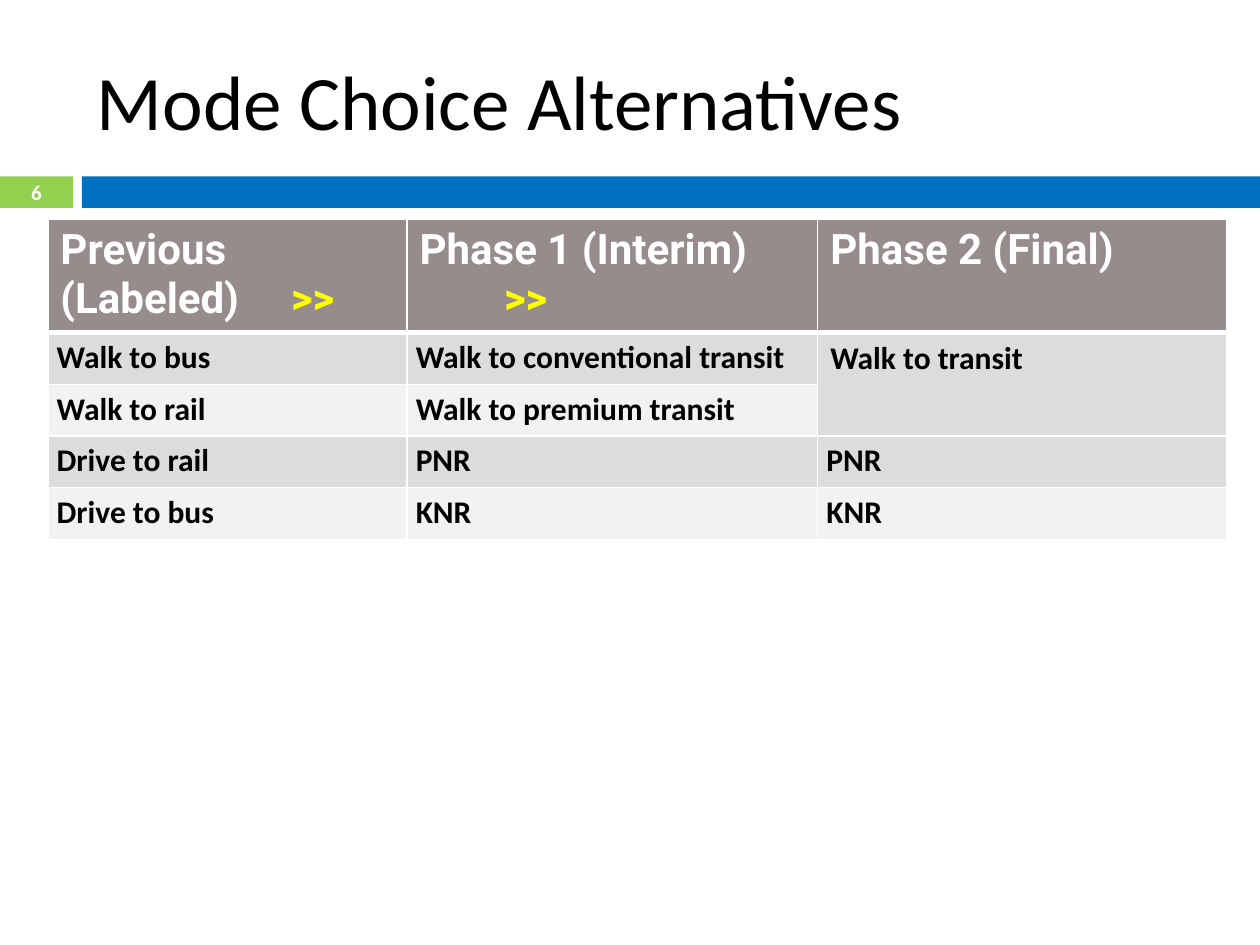
"""Build the mode choice alternatives slide with its table of phases."""
from lxml import etree
from pptx import Presentation
from pptx.dml.color import RGBColor
from pptx.enum.shapes import MSO_SHAPE
from pptx.enum.text import MSO_ANCHOR, PP_ALIGN
from pptx.oxml.ns import qn
from pptx.util import Inches, Pt

RECT = MSO_SHAPE.RECTANGLE
MIDDLE = MSO_ANCHOR.MIDDLE
LEFT, CENTER = PP_ALIGN.LEFT, PP_ALIGN.CENTER

TITLE = "Mode Choice Alternatives"
NUMBER = "6"
MARK = ">>"
HEADS = [
    [["Previous (Labeled)\t", MARK]],
    [["Phase 1 (Interim)"], [MARK]],
    [["Phase 2 (Final)"]],
]
ROWS = [
    ("Walk to bus", "Walk to conventional transit", "Walk to transit"),
    ("Walk to rail", "Walk to premium transit", ""),
    ("Drive to rail", "PNR", "PNR"),
    ("Drive to bus", "KNR", "KNR"),
]
THEME = {
    "font": "Calibri", "head_font": "Roboto",
    "title": 44, "head": 24, "body": 18, "number": 12,
    "ink": "000000", "white": "FFFFFF", "mark": "FFFF00",
    "green": "92D050", "blue": "0070C0", "top": "968C8C",
    "bands": ("DDDBDB", "F2F2F2"),
}
WIDE, HIGH = 10, 7.5
BAR_TOP, BAR_HIGH, TAB_WIDE, BAR_LEFT = 1.4, 0.25, 0.58, 0.65
TABLE_LEFT, TABLE_TOP, ROW_HIGH = 0.38, 1.74, 0.41
COLS = (2.85, 3.26, 3.25)
MARK_STOP, MARK_INDENT = 1.83, 0.67


def paint(fill, color):
    fill.solid()
    fill.fore_color.rgb = RGBColor.from_string(color)


def style(run, size, color, bold=False, font=THEME["font"]):
    run.font.name, run.font.size, run.font.bold = font, Pt(size), bold
    run.font.color.rgb = RGBColor.from_string(color)


def add_bar(slide, left, width, color):
    bar = slide.shapes.add_shape(
        RECT, Inches(left), Inches(BAR_TOP), Inches(width), Inches(BAR_HIGH))
    bar.shadow.inherit = False
    paint(bar.fill, color)
    bar.line.fill.background()
    return bar


def write(frame, text, align, *look):
    frame.word_wrap = True
    frame.vertical_anchor = MIDDLE
    frame.text = text
    para = frame.paragraphs[0]
    para.alignment = align
    style(para.runs[0], *look)


def edge(cell, top, bottom):
    props = cell._tc.get_or_add_tcPr()
    for side, width in (("L", 1), ("R", 1), ("T", top), ("B", bottom)):
        line = etree.SubElement(props, qn(f"a:ln{side}"), w=str(Pt(width)))
        fill = etree.SubElement(line, qn("a:solidFill"))
        etree.SubElement(fill, qn("a:srgbClr"), val=THEME["white"])


def fill_head(cell, lines):
    frame = cell.text_frame
    for i, parts in enumerate(lines):
        para = frame.add_paragraph() if i else frame.paragraphs[0]
        para.alignment = LEFT
        props = para._p.get_or_add_pPr()
        if i:
            props.set("marL", str(Inches(MARK_INDENT)))
        elif MARK in parts:
            stops = etree.SubElement(props, qn("a:tabLst"))
            etree.SubElement(
                stops, qn("a:tab"), pos=str(Inches(MARK_STOP)), algn="l")
        for part in parts:
            run = para.add_run()
            run.text = part
            color = THEME["mark" if part == MARK else "white"]
            style(run, THEME["head"], color, True, THEME["head_font"])


def fill_body(cell, text):
    para = cell.text_frame.paragraphs[0]
    para.text = text
    para.alignment = LEFT
    if not cell.is_merge_origin:
        cell.margin_left = cell.margin_right = Inches(0.07)
        cell.margin_top = cell.margin_bottom = 0
        para.line_spacing = 1.15
    for run in para.runs:
        style(run, THEME["body"], THEME["ink"], True)


def add_grid(slide):
    count = len(ROWS) + 1
    frame = slide.shapes.add_table(
        count, len(COLS), Inches(TABLE_LEFT), Inches(TABLE_TOP),
        Inches(sum(COLS)), Inches(ROW_HIGH * count))
    grid = frame.table
    for col, width in zip(grid.columns, COLS):
        col.width = Inches(width)
    for row in grid.rows:
        row.height = Inches(ROW_HIGH)
    grid.cell(1, 2).merge(grid.cell(2, 2))
    for r, row in enumerate([HEADS, *ROWS]):
        for c, item in enumerate(row):
            cell = grid.cell(r, c)
            edge(cell, 3 if r == 1 else 1, 3 if r == 0 else 1)
            paint(cell.fill, THEME["bands"][(r - 1) % 2] if r else THEME["top"])
            if r == 0:
                fill_head(cell, item)
            elif not cell.is_spanned:
                fill_body(cell, item)


def main():
    deck = Presentation()
    deck.slide_width, deck.slide_height = Inches(WIDE), Inches(HIGH)
    slide = deck.slides.add_slide(deck.slide_layouts[6])
    tab = add_bar(slide, 0, TAB_WIDE, THEME["green"])
    add_bar(slide, BAR_LEFT, WIDE - BAR_LEFT, THEME["blue"])
    box = slide.shapes.add_textbox(
        Inches(0.67), Inches(0.25), Inches(8.92), Inches(1.08))
    write(box.text_frame, TITLE, LEFT, THEME["title"], THEME["ink"])
    tab.text_frame.margin_top = tab.text_frame.margin_bottom = 0
    write(tab.text_frame, NUMBER, CENTER, THEME["number"], THEME["white"], True)
    add_grid(slide)
    deck.save("out.pptx")


if __name__ == "__main__":
    main()
